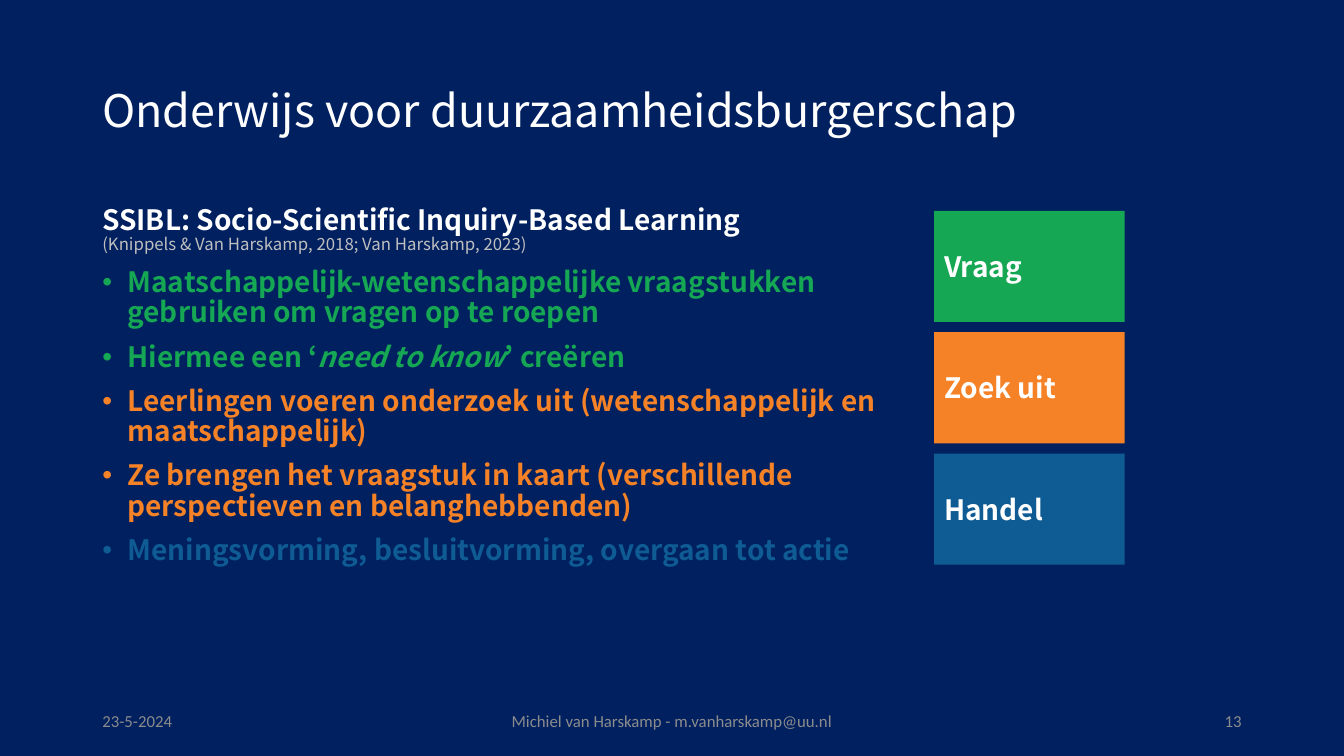
from pptx import Presentation
from pptx.dml.color import RGBColor
from pptx.enum.shapes import MSO_SHAPE
from pptx.enum.text import MSO_ANCHOR, PP_ALIGN
from pptx.oxml.ns import qn
from pptx.util import Pt
from lxml.etree import SubElement

COLORS = {
    "navy": "002060", "white": "FFFFFF", "light": "BFBFBF", "gray": "8C8C8C",
    "green": "15A754", "orange": "F58227", "blue": "0F5C94",
}
SANS = "Noto Sans CJK KR"
LEFT = 66
WIDTH = 828

# Each bullet: colour and runs of (text, italic)
BULLETS = [
    ("green", [("Maatschappelijk-wetenschappelijke vraagstukken "
                "gebruiken om vragen op te roepen", False)]),
    ("green", [("Hiermee een ‘", False), ("need to know", True),
               ("’ creëren", False)]),
    ("orange", [("Leerlingen voeren onderzoek uit (wetenschappelijk en "
                 "maatschappelijk)", False)]),
    ("orange", [("Ze brengen het vraagstuk in kaart (verschillende "
                 "perspectieven en belanghebbenden)", False)]),
    ("blue", [("Meningsvorming, besluitvorming, overgaan tot actie", False)]),
]
STEPS = [("Vraag", "green"), ("Zoek uit", "orange"), ("Handel", "blue")]


def rgb(name):
    return RGBColor.from_string(COLORS[name])


def add_run(para, text, size, color, font=SANS, bold=False, italic=False):
    run = para.add_run()
    run.text = text
    run.font.name = font
    run.font.size = Pt(size)
    run.font.bold = bold
    run.font.italic = italic
    run.font.color.rgb = rgb(color)


def add_box(slide, left, top, width, height, anchor=MSO_ANCHOR.MIDDLE):
    box = slide.shapes.add_textbox(Pt(left), Pt(top), Pt(width), Pt(height))
    frame = box.text_frame
    frame.word_wrap = True
    frame.vertical_anchor = anchor
    return frame


def set_space(para):
    para.line_spacing = 0.9
    para.space_before = Pt(10)


def add_bullet(frame, color, runs):
    para = frame.add_paragraph()
    set_space(para)
    props = para._p.get_or_add_pPr()
    props.set("marL", str(Pt(18)))
    props.set("indent", str(-Pt(18)))
    SubElement(props, qn("a:buFont")).set("typeface", "Arial")
    SubElement(props, qn("a:buChar")).set("char", "•")
    for text, italic in runs:
        add_run(para, text, 20, color, bold=True, italic=italic)


def add_title(slide):
    para = add_box(slide, LEFT, 28.75, WIDTH, 104.4).paragraphs[0]
    para.line_spacing = 0.9
    add_run(para, "Onderwijs voor duurzaamheidsburgerschap", 32, "white")


def add_body(slide):
    frame = add_box(slide, LEFT, 143.75, 601, 342.6, MSO_ANCHOR.TOP)
    para = frame.paragraphs[0]
    set_space(para)
    add_run(para, "SSIBL: Socio-Scientific Inquiry-Based Learning",
            20, "white", bold=True)
    para.add_line_break()
    add_run(para, "(Knippels & Van Harskamp, 2018; Van Harskamp, 2023)",
            12, "light")
    for color, runs in BULLETS:
        add_bullet(frame, color, runs)


def add_step(slide, row, text, color):
    box = slide.shapes.add_shape(MSO_SHAPE.RECTANGLE, Pt(667.3),
                                 Pt(150.6 + row * 86.7), Pt(136), Pt(79.4))
    box.shadow.inherit = False
    box.fill.solid()
    box.fill.fore_color.rgb = rgb(color)
    box.line.fill.background()
    box.text_frame.vertical_anchor = MSO_ANCHOR.MIDDLE
    para = box.text_frame.paragraphs[0]
    para.alignment = PP_ALIGN.LEFT
    add_run(para, text, 20, "white", bold=True)


def add_foot(slide, left, width, text, align):
    para = add_box(slide, left, 500.5, width, 28.75).paragraphs[0]
    para.alignment = align
    add_run(para, text, 12, "gray", font="Calibri")


def main():
    deck = Presentation()
    deck.slide_width, deck.slide_height = Pt(960), Pt(540)
    slide = deck.slides.add_slide(deck.slide_layouts[6])
    slide.background.fill.solid()
    slide.background.fill.fore_color.rgb = rgb("navy")

    # Heading and text
    add_title(slide)
    add_body(slide)

    # Footer: date, author, number
    add_foot(slide, LEFT, 216, "23-5-2024", PP_ALIGN.LEFT)
    add_foot(slide, 318, 324, "Michiel van Harskamp - m.vanharskamp@uu.nl",
             PP_ALIGN.CENTER)
    add_foot(slide, 678, 216, "13", PP_ALIGN.RIGHT)

    # Coloured steps
    for row, (text, color) in enumerate(STEPS):
        add_step(slide, row, text, color)

    deck.save("out.pptx")


if __name__ == "__main__":
    main()
